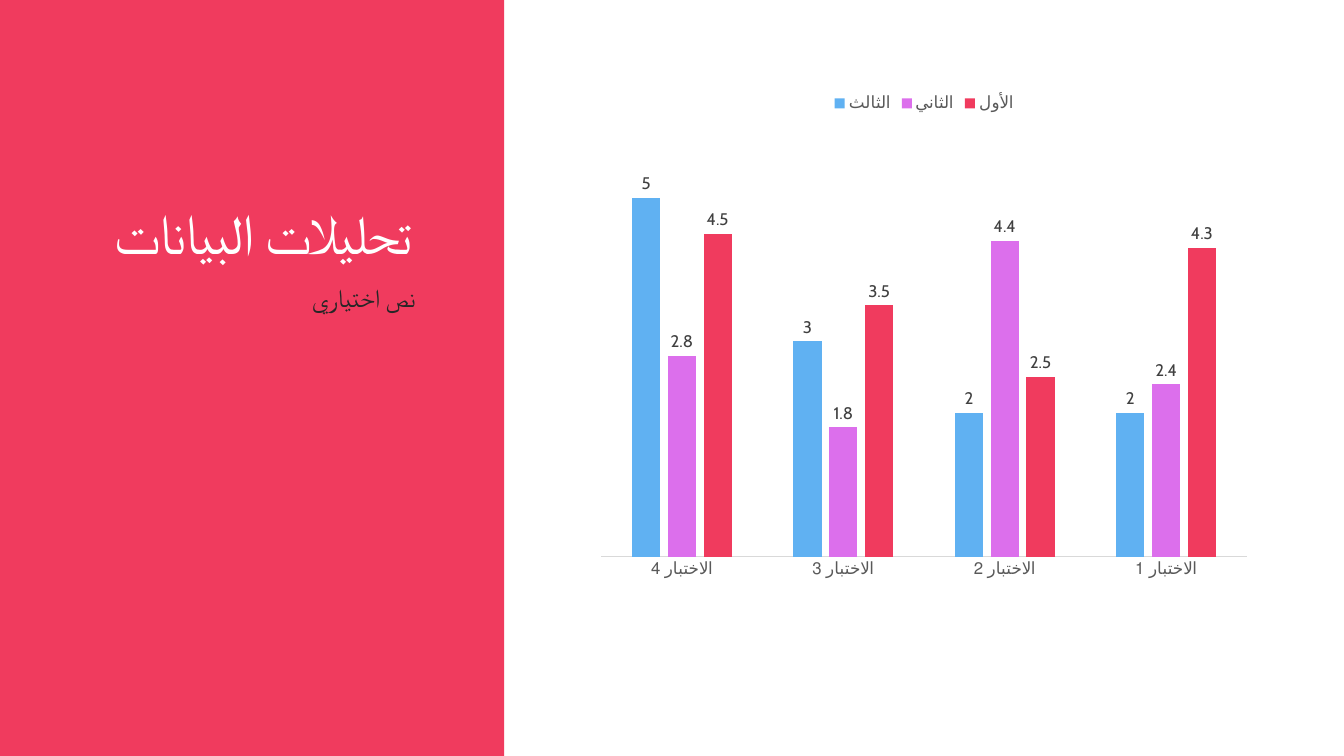
from pptx import Presentation
from pptx.chart.data import CategoryChartData
from pptx.dml.color import RGBColor
from pptx.enum.chart import XL_CHART_TYPE as ChartType, XL_LABEL_POSITION as LabelPosition
from pptx.enum.chart import XL_LEGEND_POSITION as LegendPosition, XL_TICK_MARK as TickMark
from pptx.enum.shapes import MSO_SHAPE as Shape
from pptx.enum.text import MSO_ANCHOR as Anchor, PP_ALIGN as Align
from pptx.util import Inches, Pt

FONT = "Cabin"
COLORS = {
    "red": "F03B5E", "purple": "DC6FEC", "blue": "60B1F2", "white": "FFFFFF",
    "body": "262626", "label": "404040", "axis_text": "595959", "axis_line": "D9D9D9",
}


def style_font(font, size, color):
    font.name = FONT
    font.size = Pt(size)
    font.color.rgb = RGBColor.from_string(COLORS[color])


def add_rtl_text(slide, text, box, size, color, anchor):
    frame = slide.shapes.add_textbox(*map(Inches, box)).text_frame
    frame.word_wrap = True
    frame.vertical_anchor = anchor
    paragraph = frame.paragraphs[0]
    paragraph.text = text
    paragraph.alignment = Align.RIGHT
    paragraph._p.get_or_add_pPr().set("rtl", "1")
    style_font(paragraph.font, size, color)
    return paragraph


presentation = Presentation()
presentation.slide_width = Inches(13.33)
presentation.slide_height = Inches(7.5)
slide = presentation.slides.add_slide(presentation.slide_layouts[6])

# Red side panel
panel = slide.shapes.add_shape(Shape.RECTANGLE, 0, 0, Inches(5), Inches(7.5))
panel.shadow.inherit = False
panel.fill.solid()
panel.fill.fore_color.rgb = RGBColor.from_string(COLORS["red"])
panel.line.fill.background()

# Title and body text
title = add_rtl_text(slide, "تحليلات البيانات", (0.49, 0.59, 3.7, 2.1), 40, "white", Anchor.BOTTOM)
title.line_spacing = 0.85
title.runs[0].font._element.set("spc", "-120")
body = add_rtl_text(slide, "نص اختياري", (0.5, 2.75, 3.72, 3.42), 18, "body", Anchor.TOP)
body.space_before = Pt(12)

# Chart data
series_values = [
    ("الثالث", "blue", (5, 3, 2, 2)),
    ("الثاني", "purple", (2.8, 1.8, 4.4, 2.4)),
    ("الأول", "red", (4.5, 3.5, 2.5, 4.3)),
]
chart_data = CategoryChartData()
chart_data.categories = [f"الاختبار {number}" for number in (4, 3, 2, 1)]
for name, _, values in series_values:
    chart_data.add_series(name, values)

# Column chart
chart = slide.shapes.add_chart(
    ChartType.COLUMN_CLUSTERED, Inches(5.83), Inches(0.83), Inches(6.67), Inches(5), chart_data
).chart
chart.has_title = False
chart.font.name = FONT
chart.font.size = Pt(10)
plot = chart.plots[0]
plot.gap_width = 219
plot.overlap = -27
plot.vary_by_categories = False

# Columns and their values
for series, (_, color, _) in zip(plot.series, series_values):
    series.format.fill.solid()
    series.format.fill.fore_color.rgb = RGBColor.from_string(COLORS[color])
    labels = series.data_labels
    labels.show_value = True
    labels.position = LabelPosition.OUTSIDE_END
    style_font(labels.font, 12, "label")

# Axes
category_axis = chart.category_axis
category_axis.major_tick_mark = TickMark.NONE
category_axis.format.line.color.rgb = RGBColor.from_string(COLORS["axis_line"])
category_axis.format.line.width = Pt(0.75)
style_font(category_axis.tick_labels.font, 12, "axis_text")
value_axis = chart.value_axis
value_axis.minimum_scale = 0
value_axis.maximum_scale = 6
value_axis.has_major_gridlines = False
value_axis.visible = False

# Legend
chart.has_legend = True
chart.legend.position = LegendPosition.TOP
chart.legend.include_in_layout = False
style_font(chart.legend.font, 12, "axis_text")

presentation.save("out.pptx")
